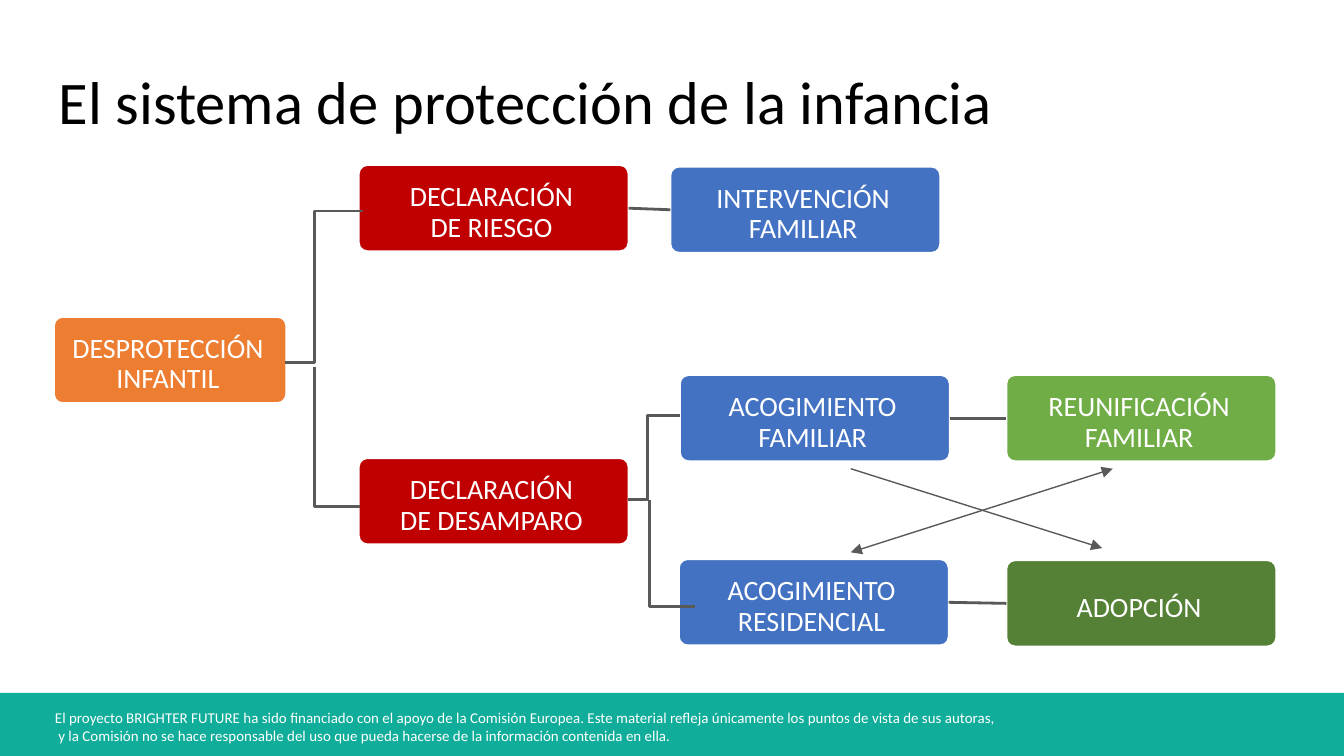
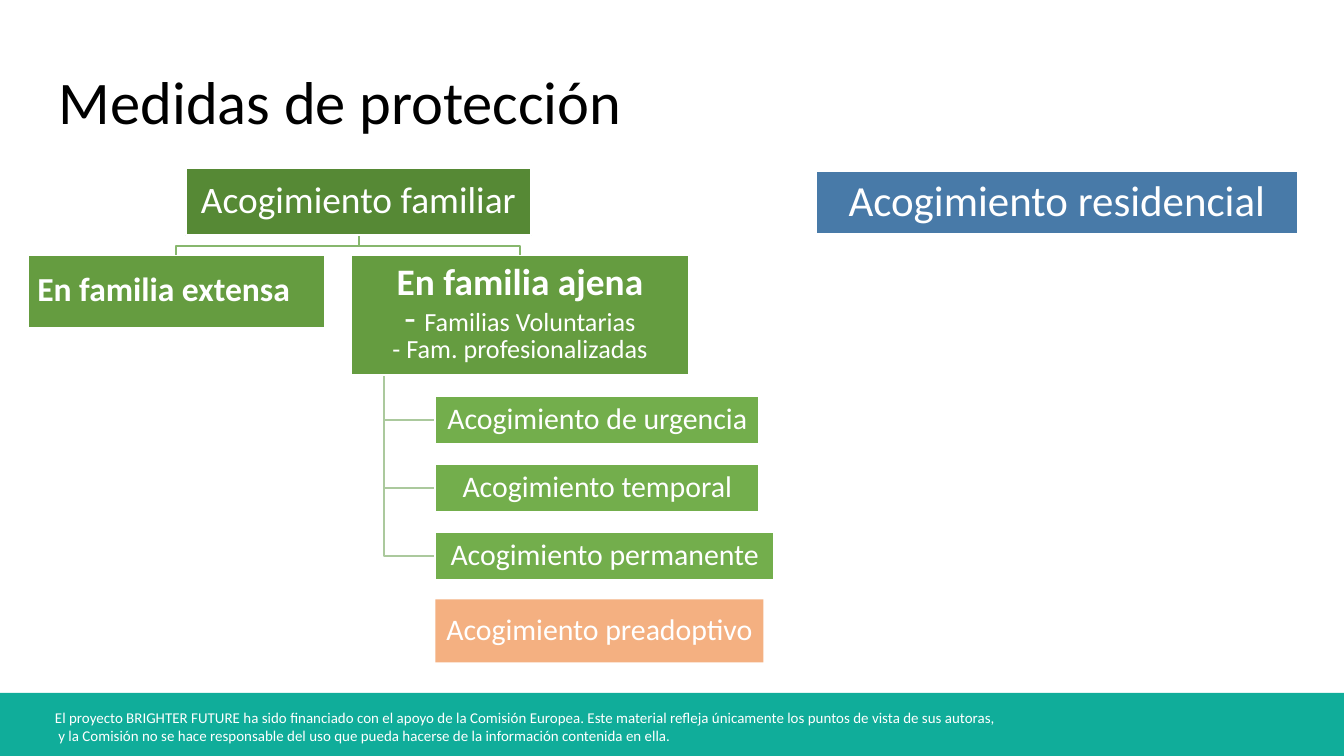
import pptx
import pptx.dml.color
import pptx.enum.shapes
import pptx.enum.text
import pptx.oxml
import pptx.oxml.ns
import pptx.util

Cm = pptx.util.Cm
Pt = pptx.util.Pt
RGBColor = pptx.dml.color.RGBColor
MSO_SHAPE = pptx.enum.shapes.MSO_SHAPE
PP_ALIGN = pptx.enum.text.PP_ALIGN
MSO_ANCHOR = pptx.enum.text.MSO_ANCHOR

FONT = "Calibri"
WHITE = RGBColor(0xFF, 0xFF, 0xFF)
BLACK = RGBColor(0x00, 0x00, 0x00)
TEAL = RGBColor(0x10, 0xAD, 0x9A)
ORANGE = RGBColor(0xED, 0x7D, 0x31)
PEACH = RGBColor(0xF4, 0xB0, 0x81)
RED = RGBColor(0xC0, 0x00, 0x00)
BLUE = RGBColor(0x43, 0x72, 0xC3)
STEEL = RGBColor(0x48, 0x7A, 0xA8)
GREEN = RGBColor(0x70, 0xAD, 0x47)
DARK_GREEN = RGBColor(0x54, 0x81, 0x35)
ROOT_GREEN = RGBColor(0x56, 0x89, 0x35)
BRANCH_GREEN = RGBColor(0x65, 0x9C, 0x40)
LEAF_GREEN = RGBColor(0x73, 0xAE, 0x4C)
ROOT_LINE = RGBColor(0x87, 0xB7, 0x6D)
LEAF_LINE = RGBColor(0xAB, 0xC9, 0x9D)
GREY = RGBColor(0x59, 0x59, 0x59)

SLIDE_WIDTH, SLIDE_HEIGHT = 25.4, 14.29
FOOTER_TEXT = (
    "El proyecto BRIGHTER FUTURE ha sido financiado con el apoyo de la Comisión Europea. "
    "Este material refleja únicamente los puntos de vista de sus autoras,\n"
    " y la Comisión no se hace responsable del uso que pueda hacerse de la información "
    "contenida en ella."
)


def add_text(paragraph, text, size, color=WHITE, bold=False):
    for index, line in enumerate(text.split("\n")):
        if index:
            paragraph.add_line_break()
        run = paragraph.add_run()
        run.text = line
        run.font.name = FONT
        run.font.size = Pt(size)
        run.font.bold = bold
        run.font.color.rgb = color


def set_margins(frame, left, top, right, bottom):
    frame.margin_left, frame.margin_top = Cm(left), Cm(top)
    frame.margin_right, frame.margin_bottom = Cm(right), Cm(bottom)
    frame.word_wrap = True


def add_box(slide, preset, left, top, width, height, fill, outlined=True):
    shape = slide.shapes.add_shape(preset, Cm(left), Cm(top), Cm(width), Cm(height))
    shape.shadow.inherit = False
    shape.fill.solid()
    shape.fill.fore_color.rgb = fill
    if outlined:
        shape.line.color.rgb = WHITE
        shape.line.width = Pt(1)
    else:
        shape.line.fill.background()
    shape.text_frame.vertical_anchor = MSO_ANCHOR.MIDDLE
    return shape


def centre_paragraph(paragraph, spacing):
    paragraph.alignment = PP_ALIGN.CENTER
    paragraph.line_spacing = spacing
    return paragraph


def add_step(slide, text, left, top, fill, width=5.1):
    shape = add_box(slide, MSO_SHAPE.ROUNDED_RECTANGLE, left, top, width, 1.63, fill)
    shape.adjustments[0] = 0.1
    set_margins(shape.text_frame, 0.1, 0.18, 0.18, 0)
    add_text(centre_paragraph(shape.text_frame.paragraphs[0], 0.9), text, 15)
    return shape


def add_measure(slide, left, top, width, height, fill, paragraphs, spacing=0.9,
                right_margin=0.03, outlined=True):
    shape = add_box(slide, MSO_SHAPE.RECTANGLE, left, top, width, height, fill, outlined)
    frame = shape.text_frame
    set_margins(frame, 0.03, 0.03, right_margin, 0.03)
    for index, runs in enumerate(paragraphs):
        paragraph = frame.add_paragraph() if index else frame.paragraphs[0]
        centre_paragraph(paragraph, spacing)
        for text, size, bold in runs:
            add_text(paragraph, text, size, bold=bold)


def add_elbow(slide, points, color=GREY, width=1.5):
    corners = [(Cm(x), Cm(y)) for x, y in points]
    builder = slide.shapes.build_freeform(*corners[0])
    builder.add_line_segments(corners[1:], close=False)
    shape = builder.convert_to_shape()
    shape.shadow.inherit = False
    shape.fill.background()
    shape.line.color.rgb = color
    shape.line.width = Pt(width)


def add_line(slide, start, end, width):
    connector = slide.shapes.add_connector(
        pptx.enum.shapes.MSO_CONNECTOR.STRAIGHT, *(Cm(value) for value in start + end))
    connector.line.color.rgb = GREY
    connector.line.width = Pt(width)
    properties = connector._element.spPr
    properties.append(pptx.oxml.parse_xml(
        f"<a:effectLst {pptx.oxml.ns.nsdecls('a')}/>"))
    return connector


def join_steps(slide, first, second):
    connector = add_line(slide, (0, 0), (1, 1), 1.5)
    connector.begin_connect(first, 3)
    connector.end_connect(second, 1)


def add_arrow(slide, start, end, ends):
    line = add_line(slide, start, end, 0.75).line._get_or_add_ln()
    for name in ends:
        line.append(pptx.oxml.parse_xml(
            f"<a:{name} {pptx.oxml.ns.nsdecls('a')} type='triangle'/>"))


def add_footer(slide):
    add_box(slide, MSO_SHAPE.RECTANGLE, 0, 13.1, SLIDE_WIDTH, 1.19, TEAL, outlined=False)
    box = slide.shapes.add_textbox(Cm(0.79), Cm(13.26), Cm(19.05), Cm(0.94))
    set_margins(box.text_frame, 0.25, 0.13, 0.25, 0.13)
    add_text(box.text_frame.paragraphs[0], FOOTER_TEXT, 8)


def add_titled_slide(presentation, text):
    slide = presentation.slides.add_slide(presentation.slide_layouts[5])
    add_footer(slide)
    title = slide.shapes.title
    title.left, title.top, title.width, title.height = Cm(0.86), Cm(1.24), Cm(23.67), Cm(1.6)
    frame = title.text_frame
    set_margins(frame, 0.25, 0.25, 0.25, 0.25)
    frame.auto_size = pptx.enum.text.MSO_AUTO_SIZE.NONE
    frame.vertical_anchor = MSO_ANCHOR.BOTTOM
    frame.paragraphs[0].alignment = PP_ALIGN.LEFT
    add_text(frame.paragraphs[0], text, 32.4, BLACK)
    return slide


def build_system(presentation):
    slide = add_titled_slide(presentation, "El sistema de protección de la infancia")
    add_step(slide, "DESPROTECCIÓN\nINFANTIL", 1.02, 5.99, ORANGE, 4.39)
    risk = add_step(slide, "DECLARACIÓN\nDE RIESGO", 6.78, 3.12, RED)
    intervention = add_step(slide, "INTERVENCIÓN\nFAMILIAR", 12.67, 3.15, BLUE)
    add_step(slide, "DECLARACIÓN\nDE DESAMPARO", 6.78, 8.66, RED)
    foster = add_step(slide, "ACOGIMIENTO\nFAMILIAR", 12.85, 7.09, BLUE)
    reunion = add_step(slide, "REUNIFICACIÓN\nFAMILIAR", 19.02, 7.09, GREEN)
    residential = add_step(slide, "ACOGIMIENTO\nRESIDENCIAL", 12.83, 10.57, BLUE)
    adoption = add_step(slide, "ADOPCIÓN", 19.02, 10.59, DARK_GREEN)

    add_elbow(slide, [(5.38, 6.86), (5.94, 6.86), (5.94, 3.99), (6.86, 3.99)])
    add_elbow(slide, [(5.94, 6.93), (5.94, 9.58), (6.81, 9.58)])
    add_elbow(slide, [(11.86, 9.45), (12.24, 9.45), (12.24, 7.85), (12.85, 7.85)])
    add_elbow(slide, [(12.27, 9.45), (12.27, 11.46), (13.13, 11.46)])
    for first, second in ((risk, intervention), (foster, reunion), (residential, adoption)):
        join_steps(slide, first, second)
    add_arrow(slide, (16.08, 10.44), (21.03, 8.86), ("headEnd", "tailEnd"))
    add_arrow(slide, (16.08, 8.86), (20.83, 10.36), ("tailEnd",))


def build_measures(presentation):
    slide = add_titled_slide(presentation, "Medidas de protección")
    for branch_x in (9.83, 3.33):
        add_elbow(slide, [(6.78, 4.45), (6.78, 4.65), (branch_x, 4.65), (branch_x, 4.83)],
                  ROOT_LINE, 1)
    add_measure(slide, 3.51, 3.18, 6.53, 1.27, ROOT_GREEN,
                [[("Acogimiento familiar", 20, False)]])
    add_measure(slide, 0.53, 4.83, 5.61, 1.37, BRANCH_GREEN,
                [[("En familia extensa", 18, True)]], spacing=0.8, right_margin=0.51)
    add_measure(slide, 6.63, 4.83, 6.4, 2.26, BRANCH_GREEN, [
        [("En familia ajena", 20, True)],
        [("- ", 20, False), ("Familias Voluntarias", 14, False)],
        [("- Fam. profesionalizadas", 14, False)],
    ], spacing=0.8)

    leaves = (("urgencia", "de urgencia", 6.12), ("temporal", "temporal", 6.12),
              ("permanente", "permanente", 6.4))
    leaf_height = 0.91
    for row, (_, kind, width) in enumerate(leaves):
        top = 7.49 + 1.28 * row
        middle = top + leaf_height / 2
        add_elbow(slide, [(7.26, 7.11), (7.26, middle), (8.23, middle)], LEAF_LINE, 1)
        add_measure(slide, 8.23, top, width, leaf_height, LEAF_GREEN,
                    [[(f"Acogimiento {kind}", 16, False)]])

    add_measure(slide, 15.42, 3.23, 9.12, 1.19, STEEL,
                [[("Acogimiento residencial", 23, False)]])
    add_measure(slide, 8.23, 11.33, 6.2, 1.19, PEACH,
                [[("Acogimiento preadoptivo", 16, False)]], outlined=False)


def main():
    presentation = pptx.Presentation()
    presentation.slide_width = Cm(SLIDE_WIDTH)
    presentation.slide_height = Cm(SLIDE_HEIGHT)
    build_system(presentation)
    build_measures(presentation)
    presentation.save("out.pptx")


if __name__ == "__main__":
    main()
